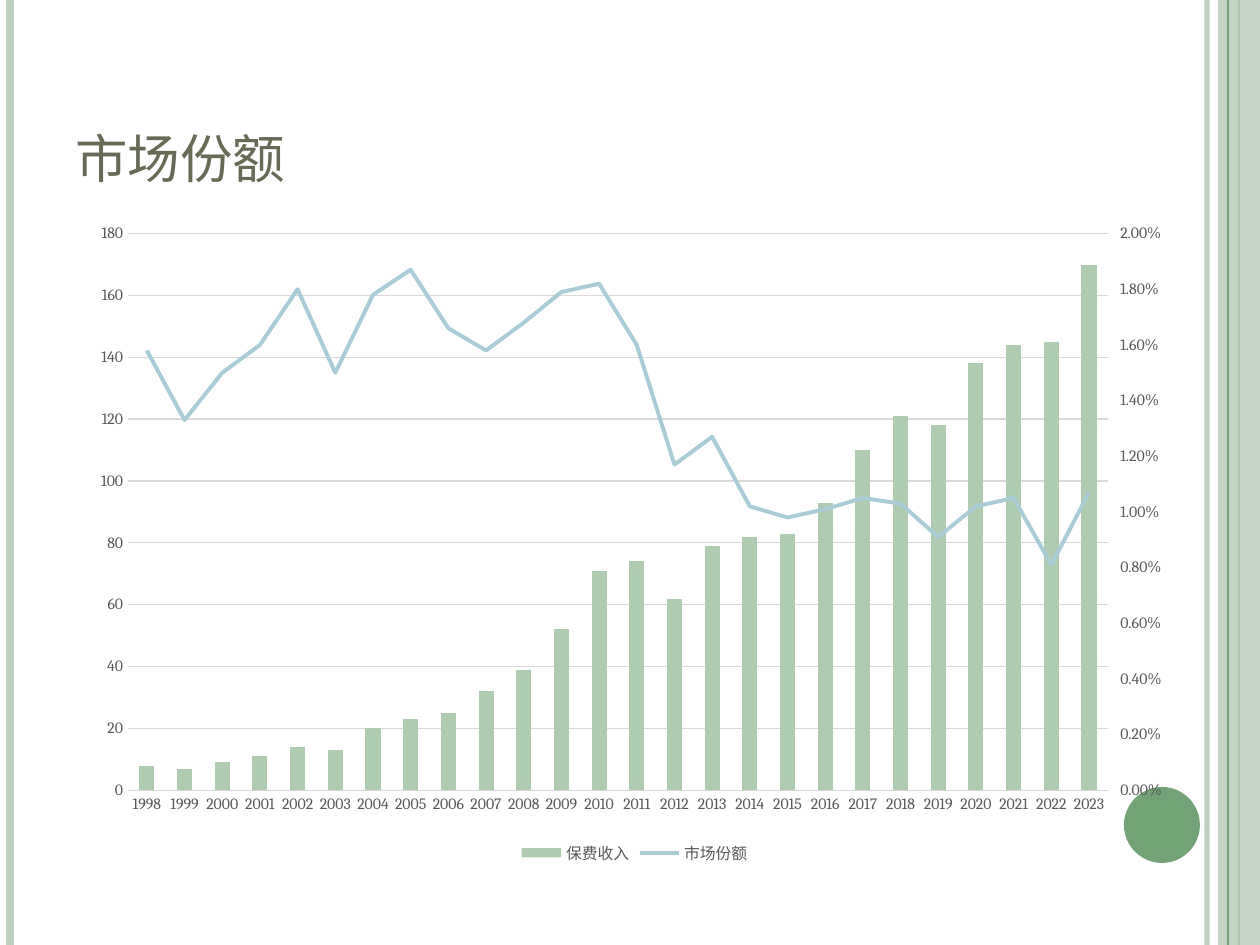
from lxml import etree
from pptx import Presentation
from pptx.chart.data import CategoryChartData
from pptx.dml.color import RGBColor
from pptx.enum.chart import (XL_CHART_TYPE, XL_LEGEND_POSITION as LEGEND,
                             XL_MARKER_STYLE as MARKER, XL_TICK_MARK as TICK)
from pptx.enum.shapes import MSO_CONNECTOR, MSO_SHAPE
from pptx.enum.text import MSO_ANCHOR
from pptx.oxml import parse_xml
from pptx.oxml.ns import nsdecls, qn
from pptx.util import Pt

PX = 914400 / 126
WIDTH, HEIGHT = 1260, 945
FONT = "Cambria"
PALE, GREEN, GRAY, GRID = "BCCEBD", "72A376", "595959", "D9D9D9"
YEARS = [str(year) for year in range(1998, 2024)]
PREMIUMS = [8, 7, 9, 11, 14, 13, 20, 23, 25, 32, 39, 52, 71,
            74, 62, 79, 82, 83, 93, 110, 121, 118, 138, 144, 145, 170]
SHARES = [0.0158, 0.0133, 0.015, 0.016, 0.018, 0.015, 0.0178, 0.0187, 0.0166,
          0.0158, 0.0168, 0.0179, 0.0182, 0.016, 0.0117, 0.0127, 0.0102, 0.0098,
          0.0101, 0.0105, 0.0103, 0.0091, 0.0102, 0.0105, 0.0081, 0.0107]


def emu(*lengths):
    """Turn px lengths into EMU."""
    return [round(n * PX) for n in lengths]


def paint(color_format, color):
    """Set a fill, line fill or font colour from a hex string."""
    if hasattr(color_format, "solid"):
        color_format.solid()
        color_format = color_format.fore_color
    color_format.rgb = RGBColor.from_string(color)


def set_alpha(element, percent):
    """Make the first solid colour of an element see-through."""
    rgb = next(element.iter(qn("a:srgbClr")))
    etree.SubElement(rgb, qn("a:alpha")).set("val", str(percent * 1000))


def style_font(font, size, color):
    """Apply the slide font in a size and colour."""
    font.name, font.size = FONT, Pt(size)
    paint(font.color, color)


def add_rule(slide, x, top, height, color, width):
    """Draw a vertical line and return it."""
    rule = slide.shapes.add_connector(
        MSO_CONNECTOR.STRAIGHT, *emu(x, top, x, top + height))
    paint(rule.line.fill, color)
    rule.line.width = Pt(width)
    etree.SubElement(rule._element.spPr, qn("a:effectLst"))
    return rule


def add_solid(slide, kind, box, color):
    """Draw a plain filled shape and return it."""
    sp = slide.shapes.add_shape(kind, *emu(*box))
    sp.shadow.inherit = False
    paint(sp.fill, color)
    sp.line.fill.background()
    return sp


def add_frame(slide, box):
    """Draw the side rules, right band and disc of the page."""
    left, top, width, height = box
    right = left + width
    set_alpha(add_rule(slide, right - 53, top, height, PALE, 3)._element, 93)
    add_rule(slide, left + 10, top, height, PALE, 4.5)
    add_rule(slide, right - 21, top, height, GREEN, 1.5)
    band = add_solid(slide, MSO_SHAPE.RECTANGLE, (right - 42, top, 42, height), PALE)
    set_alpha(band._element, 87)
    add_rule(slide, right - 32, top, height, GREEN, 0.75)
    add_solid(slide, MSO_SHAPE.OVAL, (right - 136, top + height - 158, 76, 76), GREEN)


def add_title(slide, box, text):
    """Write the slide title at the bottom of its box."""
    tf = slide.shapes.add_textbox(*emu(*box)).text_frame
    tf.word_wrap = True
    tf.vertical_anchor = MSO_ANCHOR.BOTTOM
    r = tf.paragraphs[0].add_run()
    r.text = text
    style_font(r.font, 30, "676A55")


def move_to_right_axis(chart):
    """Turn the last series into a line on a right-hand percent axis."""
    area = chart._chartSpace.chart.plotArea
    ser = area.findall(".//" + qn("c:ser"))[-1]
    for flag in ser.findall(qn("c:invertIfNegative")):
        ser.remove(flag)
    line = parse_xml(
        f'<c:lineChart {nsdecls("c")}><c:grouping val="standard"/>'
        '<c:varyColors val="0"/><c:marker val="1"/>'
        '<c:axId val="501"/><c:axId val="502"/></c:lineChart>')
    line.insert(2, ser)
    area.find(qn("c:barChart")).addnext(line)
    common = ('<c:axId val="{}"/><c:scaling><c:orientation val="minMax"/>{}</c:scaling>'
              '<c:delete val="{}"/><c:axPos val="{}"/>')
    cat = common.format(501, "", 1, "b")
    val = common.format(502, '<c:max val="0.02"/><c:min val="0"/>', 0, "r")
    text = (f'<c:txPr><a:bodyPr/><a:p><a:pPr><a:defRPr sz="900"><a:solidFill>'
            f'<a:srgbClr val="{GRAY}"/></a:solidFill><a:latin typeface="{FONT}"/>'
            '</a:defRPr></a:pPr><a:endParaRPr lang="zh-CN"/></a:p></c:txPr>')
    last = area.findall(qn("c:valAx"))[-1]
    right = parse_xml(
        f'<c:valAx {nsdecls("c", "a")}>{val}'
        '<c:numFmt formatCode="0.00%" sourceLinked="0"/><c:majorTickMark val="out"/>'
        '<c:minorTickMark val="none"/><c:tickLblPos val="nextTo"/>'
        f'<c:spPr><a:ln><a:noFill/></a:ln></c:spPr>{text}<c:crossAx val="501"/>'
        '<c:crosses val="max"/><c:majorUnit val="0.002"/></c:valAx>')
    hidden = parse_xml(
        f'<c:catAx {nsdecls("c")}>{cat}<c:crossAx val="502"/>'
        '<c:crosses val="autoZero"/></c:catAx>')
    last.addnext(right)
    right.addnext(hidden)


def place_plot(chart, x, y, w, h):
    """Fix the inner plot area as fractions of the chart."""
    area = chart._chartSpace.chart.plotArea
    for old in area.findall(qn("c:layout")):
        area.remove(old)
    sizes = "".join(f'<c:{tag} val="{n}"/>' for tag, n in zip("xywh", (x, y, w, h)))
    area.insert(0, parse_xml(
        f'<c:layout {nsdecls("c")}><c:manualLayout><c:layoutTarget val="inner"/>'
        f'<c:xMode val="edge"/><c:yMode val="edge"/>{sizes}'
        '</c:manualLayout></c:layout>'))


def add_share_chart(slide, box):
    """Chart premium income as columns and market share as a line."""
    data = CategoryChartData()
    data.categories = YEARS
    data.add_series("保费收入", PREMIUMS)
    data.add_series("市场份额", SHARES, number_format="0.00%")
    chart = slide.shapes.add_chart(
        XL_CHART_TYPE.COLUMN_CLUSTERED, *emu(*box), data).chart
    style_font(chart.font, 10, "000000")
    chart.has_title = False
    chart.has_legend = True
    chart.legend.position = LEGEND.BOTTOM
    chart.legend.include_in_layout = False
    style_font(chart.legend.font, 9, GRAY)

    years, amounts = chart.category_axis, chart.value_axis
    for axis in (years, amounts):
        axis.major_tick_mark = axis.minor_tick_mark = TICK.NONE
        style_font(axis.tick_labels.font, 9, GRAY)
    amounts.minimum_scale, amounts.maximum_scale, amounts.major_unit = 0, 180, 20
    amounts.format.line.fill.background()
    for line in (years.format.line, amounts.major_gridlines.format.line):
        paint(line.fill, GRID)
        line.width = Pt(0.75)

    move_to_right_axis(chart)
    place_plot(chart, 0.04, 0.03, 0.89, 0.85)
    columns, lines = chart.plots
    columns.gap_width = 150
    columns.vary_by_categories = False
    paint(columns.series[0].format.fill, "B0CCB0")
    share = lines.series[0]
    share.smooth = False
    share.marker.style = MARKER.NONE
    paint(share.format.line.fill, "A8CDD7")
    share.format.line.width = Pt(2.25)


def main():
    """Build and save the slide."""
    prs = Presentation()
    prs.slide_width, prs.slide_height = emu(WIDTH, HEIGHT)
    slide = prs.slides.add_slide(prs.slide_layouts[6])
    add_frame(slide, (0, 0, WIDTH, HEIGHT))
    add_title(slide, (63, 38, 1029, 157), "市场份额")
    add_share_chart(slide, (84, 214, 1101, 655))
    prs.save("out.pptx")


if __name__ == "__main__":
    main()
